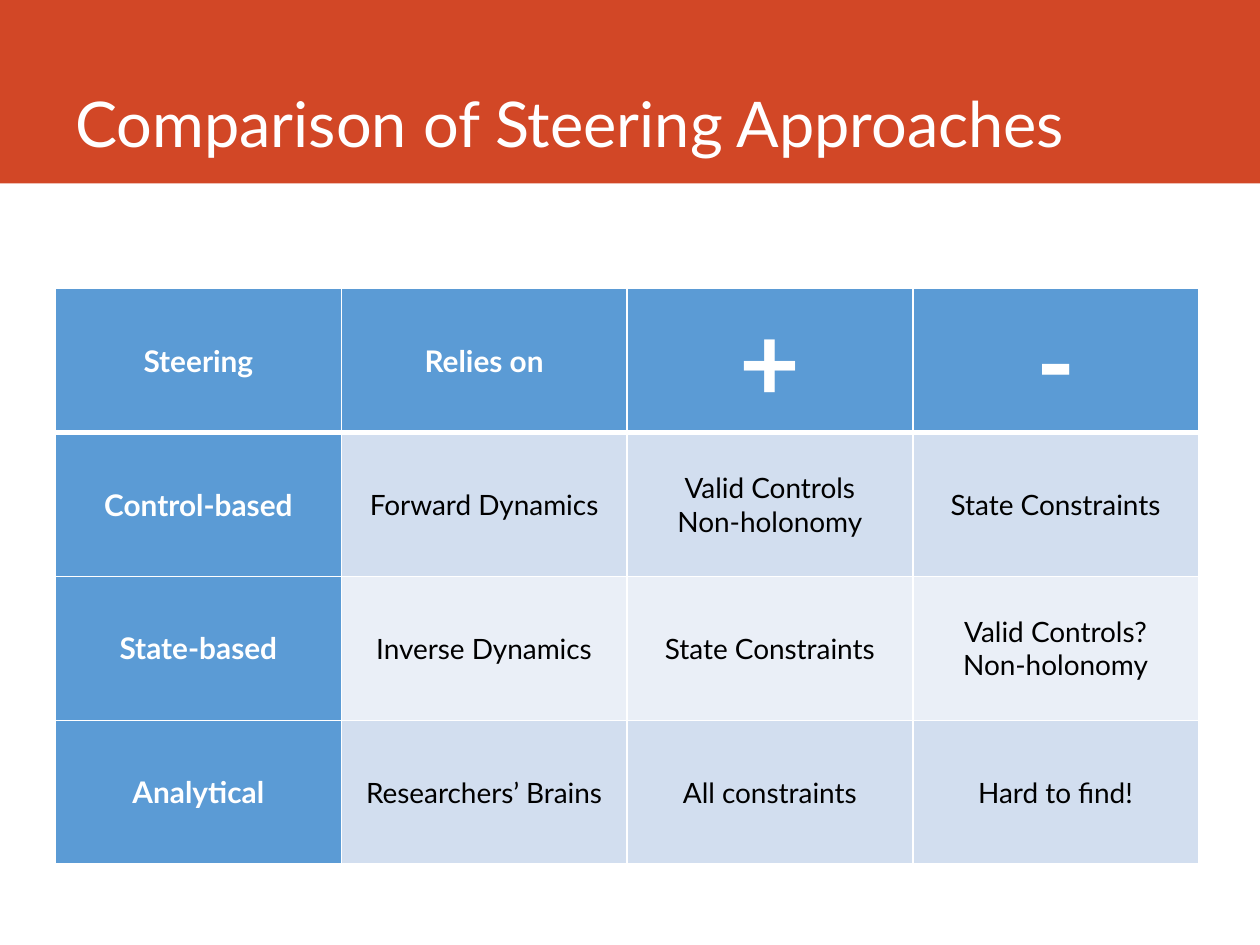
from dataclasses import dataclass

import pptx
import pptx.dml.color
import pptx.enum.shapes
import pptx.enum.text
import pptx.oxml
import pptx.oxml.ns
import pptx.util
from pptx.util import Cm

RGB = pptx.dml.color.RGBColor.from_string
ANCHOR = pptx.enum.text.MSO_ANCHOR
ALIGN = pptx.enum.text.PP_ALIGN


@dataclass(frozen=True)
class Theme:
    font: str = "Lato"
    banner: str = "D24726"
    heading: str = "5B9BD5"
    bands: tuple[str, str] = ("D2DEEF", "EAEFF7")
    light: str = "FFFFFF"
    dark: str = "000000"
    title_size: int = 36
    sign_size: int = 60
    heading_size: int = 17
    body_size: int = 16
    rule: int = 1
    heavy_rule: int = 3


@dataclass(frozen=True)
class Approach:
    steering: str
    relies_on: str
    strengths: str
    weaknesses: str

    def cells(self) -> tuple[str, ...]:
        return self.steering, self.relies_on, self.strengths, self.weaknesses


THEME = Theme()
HEADINGS = Approach("Steering", "Relies on", "+", "-")
APPROACHES = (
    Approach("Control-based", "Forward Dynamics",
             "Valid Controls\nNon-holonomy", "State Constraints"),
    Approach("State-based", "Inverse Dynamics",
             "State Constraints", "Valid Controls?\nNon-holonomy"),
    Approach("Analytical", "Researchers’ Brains",
             "All constraints", "Hard to find!"),
)
COLUMN_WIDTH, ROW_HEIGHT = Cm(5.76), Cm(2.9)
CELL_FORMAT = {
    "vertical_anchor": ANCHOR.MIDDLE,
    "margin_left": Cm(0.18),
    "margin_right": Cm(0.18),
    "margin_top": Cm(0.08),
    "margin_bottom": Cm(0.08),
}


def apply_format(target, values: dict) -> None:
    for attribute, value in values.items():
        setattr(target, attribute, value)


def write_text(frame, text: str, size: int, color: str, bold: bool, align) -> None:
    """Fill the frame, one paragraph for each line of text."""
    frame.text = text
    for paragraph in frame.paragraphs:
        paragraph.alignment = align
        for run in paragraph.runs:
            apply_format(run.font, {"name": THEME.font, "bold": bold,
                                    "size": pptx.util.Pt(size)})
            run.font.color.rgb = RGB(color)


def add_borders(cell, widths: dict[str, int]) -> None:
    """Draw cell edges; must run before the cell gets its fill."""
    properties = cell._tc.get_or_add_tcPr()
    for edge, width in widths.items():
        properties.append(pptx.oxml.parse_xml(
            f'<a:ln{edge} {pptx.oxml.ns.nsdecls("a")} w="{pptx.util.Pt(width)}">'
            f'<a:solidFill><a:srgbClr val="{THEME.light}"/></a:solidFill>'
            f'</a:ln{edge}>'))


def add_banner(slide, width: int, title: str) -> None:
    banner = slide.shapes.add_shape(
        pptx.enum.shapes.MSO_SHAPE.RECTANGLE, 0, 0, width, Cm(3.7))
    banner.shadow.inherit = False
    banner.fill.solid()
    banner.fill.fore_color.rgb = RGB(THEME.banner)
    banner.line.fill.background()

    frame = slide.shapes.add_textbox(Cm(1.27), 0, Cm(22.4), Cm(3.35)).text_frame
    apply_format(frame, {"word_wrap": True, "vertical_anchor": ANCHOR.BOTTOM})
    write_text(frame, title, THEME.title_size, THEME.light, False, ALIGN.LEFT)


def style_cell(cell, row: int, column: int, text: str) -> None:
    is_heading = row == 0 or column == 0
    size = THEME.heading_size if is_heading else THEME.body_size
    if text in ("+", "-"):
        size = THEME.sign_size
    apply_format(cell, CELL_FORMAT)
    write_text(cell.text_frame, text, size,
               THEME.light if is_heading else THEME.dark, is_heading, ALIGN.CENTER)
    add_borders(cell, {
        "L": THEME.rule,
        "R": THEME.rule,
        "T": THEME.heavy_rule if row == 1 else THEME.rule,
        "B": THEME.heavy_rule if row == 0 else THEME.rule,
    })
    cell.fill.solid()
    cell.fill.fore_color.rgb = RGB(
        THEME.heading if is_heading else THEME.bands[(row - 1) % 2])


def add_comparison(slide, rows: tuple[Approach, ...]) -> None:
    columns = len(rows[0].cells())
    comparison = slide.shapes.add_table(
        len(rows), columns, Cm(1.12), Cm(5.82),
        COLUMN_WIDTH * columns, ROW_HEIGHT * len(rows)).table
    comparison.first_col = True
    for row, approach in enumerate(rows):
        for column, text in enumerate(approach.cells()):
            style_cell(comparison.cell(row, column), row, column, text)


def main() -> None:
    deck = pptx.Presentation()
    apply_format(deck, {"slide_width": Cm(25.4), "slide_height": Cm(19.05)})
    slide = deck.slides.add_slide(deck.slide_layouts[6])
    add_banner(slide, deck.slide_width, "Comparison of Steering Approaches")
    add_comparison(slide, (HEADINGS, *APPROACHES))
    deck.save("out.pptx")


if __name__ == "__main__":
    main()
